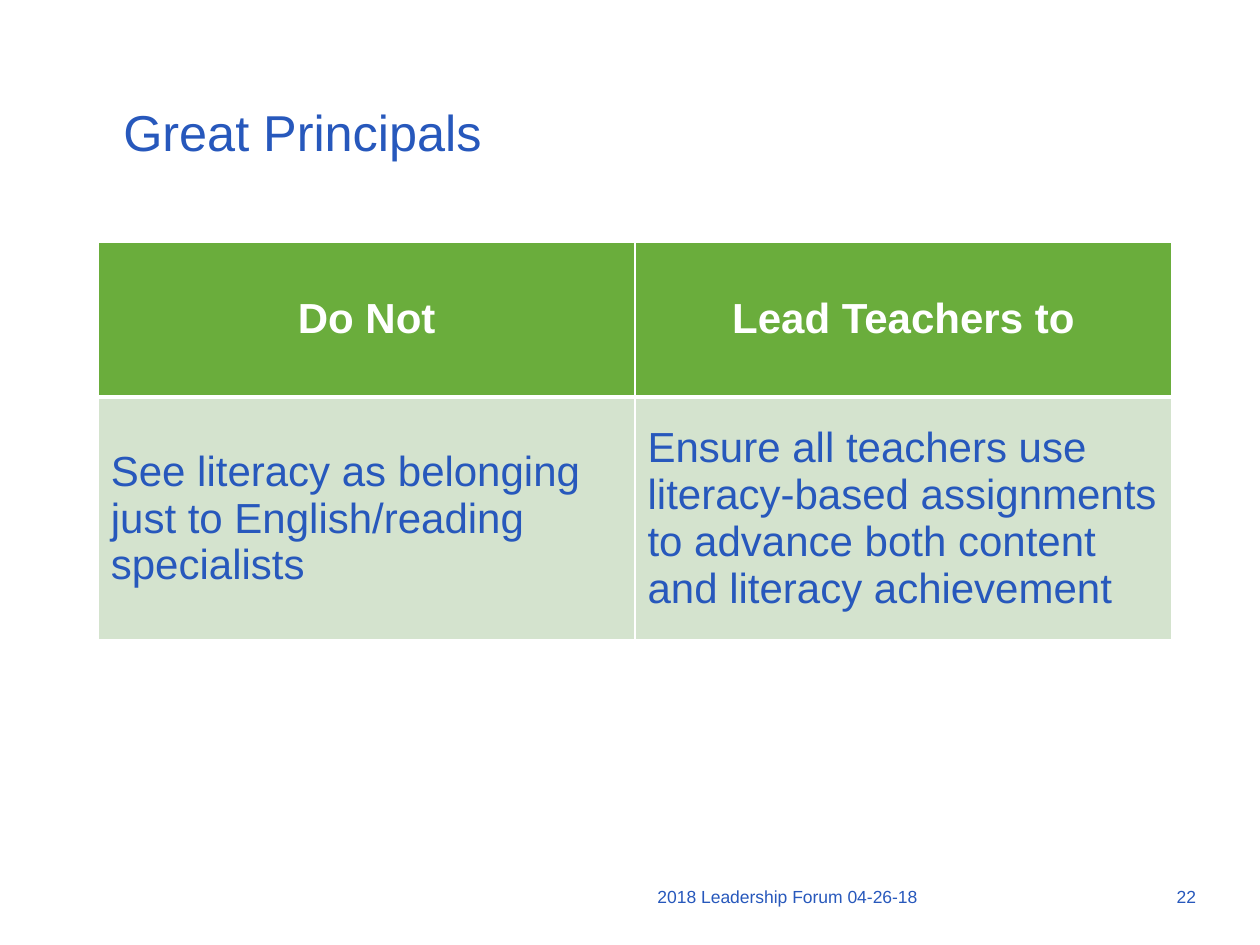
from lxml import etree
from pptx import Presentation
from pptx.dml.color import RGBColor
from pptx.enum.text import MSO_ANCHOR, PP_ALIGN
from pptx.oxml.ns import qn
from pptx.util import Inches, Pt

BLUE = RGBColor(0x27, 0x58, 0xBC)
GREEN = RGBColor(0x6A, 0xAD, 0x3C)
PALE_GREEN = RGBColor(0xD4, 0xE3, 0xCE)
WHITE = RGBColor(0xFF, 0xFF, 0xFF)
TOP, MIDDLE = MSO_ANCHOR.TOP, MSO_ANCHOR.MIDDLE
LEFT, CENTER = PP_ALIGN.LEFT, PP_ALIGN.CENTER

SLIDE_WIDTH, SLIDE_HEIGHT = 10, 7.5
FOOTER_TOP, FOOTER_HEIGHT = 6.98, 0.45
BLANK_LAYOUT = 6


class SlideBuilder:
    """Adds styled elements to one slide; lengths are in inches."""

    font_name = "Arial"

    def __init__(self, slide):
        self.slide = slide

    def style_text(self, frame, text, size, color, bold=False, align=LEFT):
        frame.text = text
        for paragraph in frame.paragraphs:
            paragraph.alignment = align
            for run in paragraph.runs:
                run.font.name = self.font_name
                run.font.size = Pt(size)
                run.font.bold = bold
                run.font.color.rgb = color

    def text(self, text, left, top, width, height, size, anchor=TOP):
        box = self.slide.shapes.add_textbox(
            Inches(left), Inches(top), Inches(width), Inches(height))
        frame = box.text_frame
        frame.word_wrap = True
        frame.vertical_anchor = anchor
        self.style_text(frame, text, size, BLUE)

    def border(self, cell, widths):
        """Draw white cell edges; widths maps an edge letter to points."""
        properties = cell._tc.get_or_add_tcPr()
        for position, (edge, width) in enumerate(widths.items()):
            line = etree.Element(qn(f"a:ln{edge}"), w=str(Pt(width)))
            fill = etree.SubElement(line, qn("a:solidFill"))
            etree.SubElement(fill, qn("a:srgbClr"), val=str(WHITE))
            properties.insert(position, line)

    def table(self, rows, left, top, column_width, row_heights, size):
        column_count = len(rows[0])
        table = self.slide.shapes.add_table(
            len(rows), column_count, Inches(left), Inches(top),
            Inches(column_width * column_count),
            Inches(sum(row_heights))).table
        for column in table.columns:
            column.width = Inches(column_width)
        for r, (texts, height) in enumerate(zip(rows, row_heights)):
            table.rows[r].height = Inches(height)
            is_header = r == 0
            for c, text in enumerate(texts):
                cell = table.cell(r, c)
                cell.vertical_anchor = MIDDLE
                cell.fill.solid()
                cell.fill.fore_color.rgb = GREEN if is_header else PALE_GREEN
                self.style_text(cell.text_frame, text, size,
                                WHITE if is_header else BLUE,
                                is_header, CENTER if is_header else LEFT)
                self.border(cell, {"L": 1, "R": 1,
                                   "T": 1 if is_header else 3,
                                   "B": 3 if is_header else 1})


def main():
    presentation = Presentation()
    presentation.slide_width = Inches(SLIDE_WIDTH)
    presentation.slide_height = Inches(SLIDE_HEIGHT)
    layout = presentation.slide_layouts[BLANK_LAYOUT]
    builder = SlideBuilder(presentation.slides.add_slide(layout))

    builder.text("Great Principals", 0.88, 0.73, 8.41, 0.62, 28.8, MIDDLE)
    builder.table(
        [["Do Not", "Lead Teachers to"],
         ["See literacy as belonging just to English/reading specialists",
          "Ensure all teachers use\vliteracy-based assignments to advance "
          "both content and literacy achievement"]],
        left=0.78, top=1.92, column_width=4.26,
        row_heights=[1.23, 1.93], size=24)
    builder.text("2018 Leadership Forum 04-26-18",
                 5.12, FOOTER_TOP, 4.13, FOOTER_HEIGHT, 10)
    builder.text("22", 9.24, FOOTER_TOP, 0.57, FOOTER_HEIGHT, 10)

    presentation.save("out.pptx")


if __name__ == "__main__":
    main()
